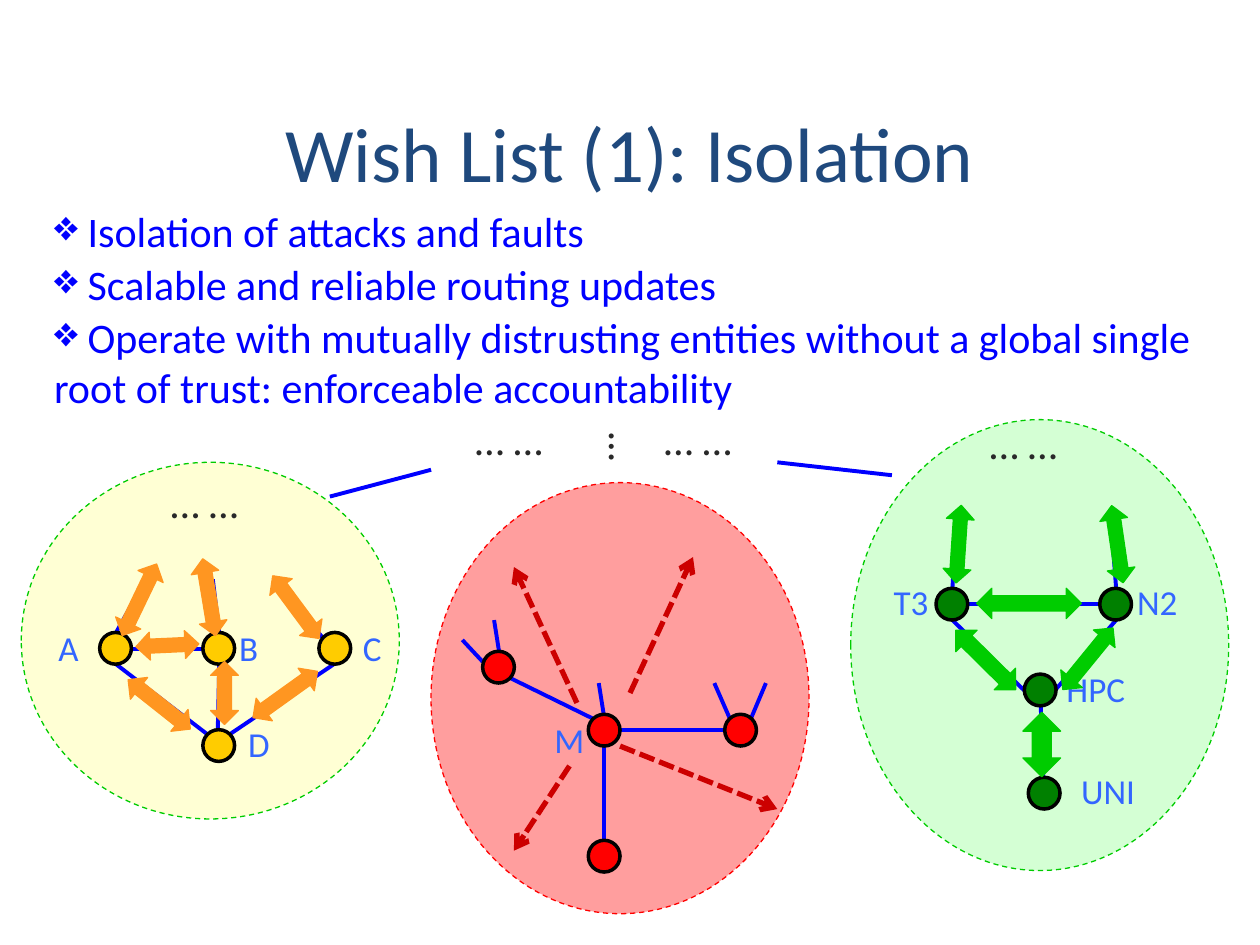
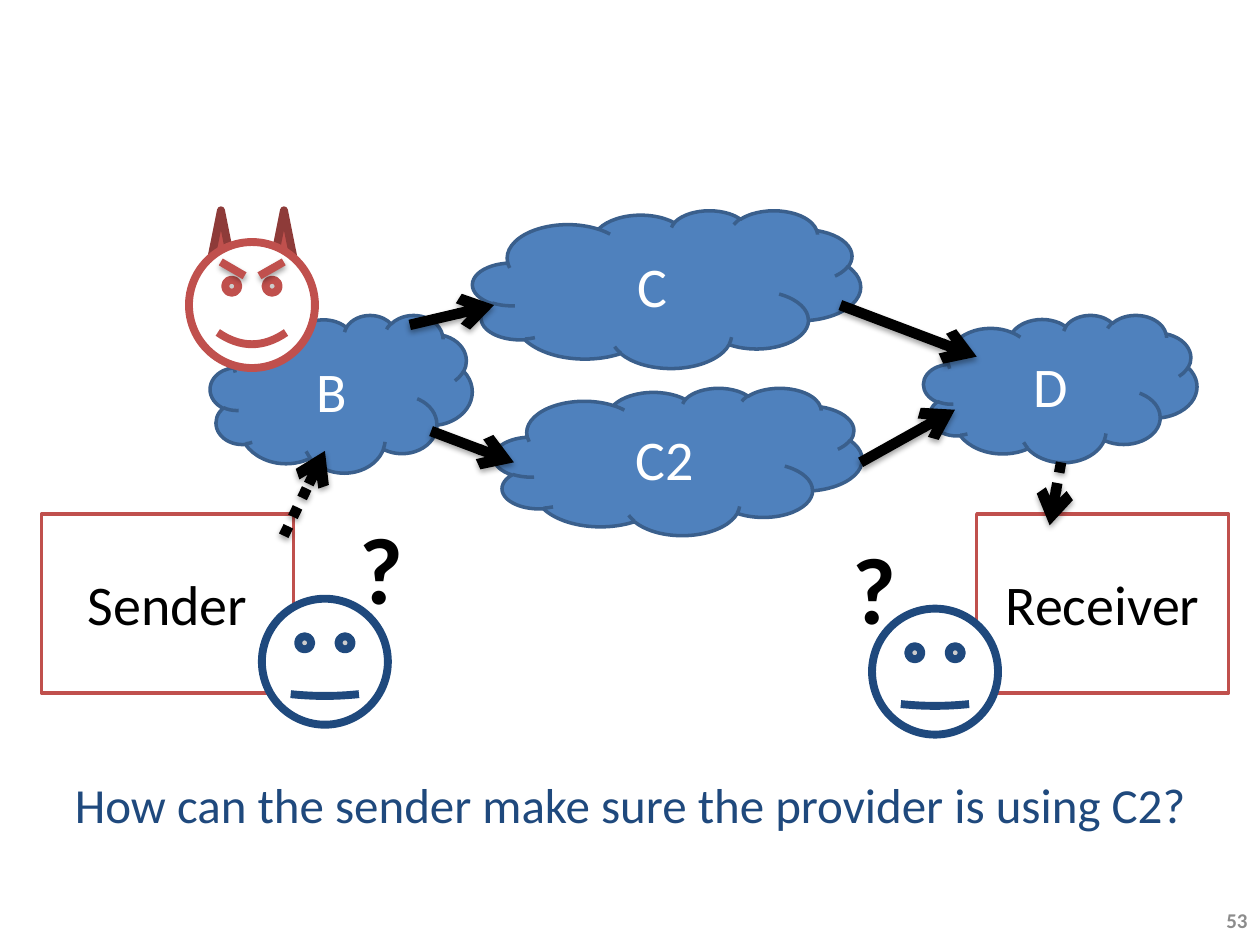
from lxml import etree
from pptx import Presentation
from pptx.dml.color import RGBColor
from pptx.enum.dml import MSO_LINE
from pptx.enum.shapes import MSO_CONNECTOR, MSO_SHAPE
from pptx.enum.text import MSO_ANCHOR, PP_ALIGN
from pptx.oxml.ns import qn
from pptx.util import Cm, Pt

OVAL, RECT, CLOUD = MSO_SHAPE.OVAL, MSO_SHAPE.RECTANGLE, MSO_SHAPE.CLOUD
SMILEY, TRIANGLE = MSO_SHAPE.SMILEY_FACE, MSO_SHAPE.ISOSCELES_TRIANGLE
DOUBLE_ARROW = MSO_SHAPE.LEFT_RIGHT_ARROW
DASH, SHORT_DASH, DOT = MSO_LINE.DASH, MSO_LINE.SQUARE_DOT, MSO_LINE.ROUND_DOT
STRAIGHT = MSO_CONNECTOR.STRAIGHT
LEFT, CENTER, RIGHT = PP_ALIGN.LEFT, PP_ALIGN.CENTER, PP_ALIGN.RIGHT
TOP, MIDDLE = MSO_ANCHOR.TOP, MSO_ANCHOR.MIDDLE

FONT = "Calibri"
COLORS = {
    "title": "1F497D", "blue": "0000FF", "label": "3366FF", "dots": "292929",
    "black": "000000", "white": "FFFFFF", "number": "8C8C8C",
    "lime": "66FF66", "lemon": "FFFF66", "red": "FF0000", "border": "00CC00",
    "green node": "008000", "yellow node": "FFCC00",
    "orange": "FF9621", "attack": "CC0000",
    "cloud": "4F81BD", "cloud edge": "3A5F8C",
    "brick": "C0504D", "horn edge": "8E3B39",
}
COLORS = {name: RGBColor.from_string(value) for name, value in COLORS.items()}


def add_part(slide, kind, box, fill=None, edge=None, width=0.75, text="",
             size=20, color="black", align=CENTER, anchor=MIDDLE, bold=False):
    """Add a preset shape, or a text box when kind is None."""
    box = [Cm(length) for length in box]
    if kind is None:
        part = slide.shapes.add_textbox(*box)
    else:
        part = slide.shapes.add_shape(kind, *box)
        part.shadow.inherit = False
        part.fill.solid()
        part.fill.fore_color.rgb = COLORS[fill]
        part.line.color.rgb = COLORS[edge]
        part.line.width = Pt(width)
    if text:
        part.text_frame.text = text
        part.text_frame.vertical_anchor = anchor
        paragraph = part.text_frame.paragraphs[0]
        paragraph.alignment = align
        paragraph.font.name, paragraph.font.size = FONT, Pt(size)
        paragraph.font.bold = bold
        paragraph.font.color.rgb = COLORS[color]
    return part


def add_line(slide, ends, color, width, dash=None, arrow=False, shadow=False):
    line = slide.shapes.add_connector(STRAIGHT, *[Cm(length) for length in ends])
    line.line.color.rgb = COLORS[color]
    line.line.width = Pt(width)
    if dash:
        line.line.dash_style = dash
    properties = line._element.spPr
    if arrow:
        etree.SubElement(properties.find(qn("a:ln")), qn("a:tailEnd"), type="arrow")
    effects = etree.SubElement(properties, qn("a:effectLst"))
    if shadow:
        outer = etree.SubElement(effects, qn("a:outerShdw"), blurRad="40000",
                                 dist="23000", dir="5400000", rotWithShape="0")
        black = etree.SubElement(outer, qn("a:srgbClr"), val="000000")
        etree.SubElement(black, qn("a:alpha"), val="35000")


prs = Presentation()
prs.slide_width, prs.slide_height = Cm(25.4), Cm(19.05)

# Titles of both slides
TITLES = [
    ("Wish List (1): Isolation", 44, (1.27, 1.47, 22.86, 3.18)),
    ("How can the sender make sure the provider is using C2?", 28,
     (0, 14.61, 25.4, 3.18)),
]
for text, size, box in TITLES:
    title = prs.slides.add_slide(prs.slide_layouts[5]).shapes.title
    title.left, title.top, title.width, title.height = [Cm(n) for n in box]
    title.text_frame.text = text
    title.text_frame.vertical_anchor = MIDDLE
    heading = title.text_frame.paragraphs[0]
    heading.alignment = CENTER
    heading.font.name, heading.font.size = FONT, Pt(size)
    heading.font.color.rgb = COLORS["title"]
isolation, routing = prs.slides

# Slide 1: isolated zones, translucent with dashed borders
ZONES = [
    ("lime", "border", 28, (17.15, 8.46, 7.62, 9.09)),
    ("lemon", "border", 28, (0.43, 9.32, 7.62, 7.19)),
    ("red", "red", 38, (8.69, 9.73, 7.62, 8.69)),
]
for fill, edge, opacity, box in ZONES:
    zone = add_part(isolation, OVAL, box, fill, edge)
    zone.line.dash_style = DASH
    tint = zone._element.spPr.find(qn("a:solidFill"))[0]
    etree.SubElement(tint, qn("a:alpha"), val=str(opacity * 1000))

# Links between zones, then inside the green, red and yellow zones
LINKS = [
    (8.69, 9.47, 6.65, 10.01), (17.98, 9.58, 15.67, 9.32),
    (21.03, 15.67, 20.98, 14.22), (20.65, 13.92, 19.2, 12.5),
    (21.29, 13.89, 22.5, 12.5), (19.25, 10.95, 19.2, 11.86),
    (22.43, 10.95, 22.5, 11.86), (22.17, 12.17, 19.51, 12.17),
    (10.29, 13.67, 11.94, 14.48), (12.5, 14.71, 14.61, 14.71),
    (12.17, 15.04, 12.17, 16.94), (9.96, 12.5, 10.06, 13.13),
    (9.32, 12.9, 9.73, 13.34), (12.07, 13.77, 12.17, 14.4),
    (14.4, 13.77, 14.71, 14.48), (15.44, 13.77, 15.14, 14.48),
    (3.05, 11.48, 2.34, 12.75), (4.29, 11.68, 4.42, 12.75),
    (2.34, 13.39, 4.19, 14.81), (4.62, 14.81, 6.73, 13.39),
    (4.39, 14.71, 4.42, 13.39), (4.09, 13.08, 2.64, 13.08),
    (5.51, 11.63, 6.5, 12.85),
]
for ends in LINKS:
    add_line(isolation, ends, "blue", 2.25)

# Nodes
NODES = {
    "green node": [(20.73, 15.67), (20.65, 13.59), (18.87, 11.86), (22.17, 11.86)],
    "red": [(11.86, 14.4), (11.86, 16.94), (9.73, 13.13), (14.61, 14.4)],
    "yellow node": [(4.09, 14.71), (4.09, 12.75), (2.01, 12.75), (6.43, 12.75)],
}
for fill, corners in NODES.items():
    for left, top in corners:
        add_part(isolation, OVAL, (left, top, 0.64, 0.64), fill, "black", 2)

# Node labels, without side margins so that each name keeps to one line
LABELS = [
    ("UNI", 21.36, 15.39, 1.96), ("HPC", 21.29, 13.34, 1.6),
    ("N2", 22.81, 11.58, 1.04), ("T3", 17.78, 11.58, 1.17),
    ("M", 10.92, 14.35, 1.12), ("D", 4.75, 14.45, 0.94),
    ("C", 7.06, 12.5, 0.89), ("A", 0.91, 12.5, 0.94), ("B", 4.57, 12.5, 0.89),
]
for text, left, top, width in LABELS:
    label = add_part(isolation, None, (left, top, width, 1.12), text=text,
                     color="label", anchor=TOP)
    label.text_frame.word_wrap = False
    label.text_frame.margin_left = label.text_frame.margin_right = 0

# Ellipses standing for further domains
ELLIPSES = [
    ("… …", 9.32, 8.33, 1.88, 0), ("… …", 13.13, 8.33, 1.88, 0),
    ("… …", 19.69, 8.41, 1.88, 0), ("… …", 3.18, 9.6, 1.88, 0),
    (" …", 11.89, 8.33, 1.3, 90),
]
for text, left, top, width, angle in ELLIPSES:
    ellipsis = add_part(isolation, None, (left, top, width, 1.19), text=text,
                        size=24, color="dots", anchor=TOP)
    ellipsis.rotation = angle
    ellipsis.text_frame.word_wrap = False
    ellipsis.text_frame.paragraphs[0].line_spacing = 0.9

# Traffic arrows: left, top, width, height, angle
TRAFFIC = {
    "border": [
        (19.02, 13, 1.7, 0.61, 44.7), (21.13, 13, 1.6, 0.56, 129.2),
        (18.54, 10.69, 1.57, 0.56, 93.8), (21.74, 10.69, 1.57, 0.56, 81.6),
        (20.35, 14.63, 1.3, 0.76, 90), (19.69, 11.86, 2.11, 0.61, 0),
    ],
    "orange": [
        (3.43, 11.76, 1.57, 0.56, 80.6), (2.01, 11.81, 1.6, 0.56, 115.7),
        (2.74, 12.73, 1.27, 0.56, 357.4), (3.89, 13.69, 1.27, 0.56, 90),
        (2.41, 13.92, 1.6, 0.56, 38.4), (4.95, 13.72, 1.6, 0.56, 144.4),
        (5.18, 11.96, 1.57, 0.56, 53.5),
    ],
}
for color, arrows in TRAFFIC.items():
    for *box, angle in arrows:
        add_part(isolation, DOUBLE_ARROW, box, color, color).rotation = angle

# Attacks from M
ATTACKS = [
    (11.63, 14.17, 10.36, 11.43), (12.5, 15.04, 15.67, 16.31),
    (12.7, 13.97, 13.97, 11.23), (11.48, 15.44, 10.36, 17.15),
]
for ends in ATTACKS:
    add_line(isolation, ends, "attack", 3, SHORT_DASH, arrow=True)

# Wishes
WISHES = [
    (" Isolation of attacks and faults", 13.97, 1.3),
    (" Scalable and reliable routing updates", 18.42, 1.3),
    (" Operate with mutually distrusting entities without a global single "
     "root of trust: enforceable accountability", 23.93, 2.31),
]
for row, (text, width, height) in enumerate(WISHES):
    wish = add_part(isolation, None, (0.84, 4.01 + 1.07 * row, width, height),
                    text=text, size=24, color="blue", align=LEFT, anchor=TOP)
    wish.text_frame.word_wrap = True
    paragraph = wish.text_frame.paragraphs[0]
    paragraph.runs[0].font.size = Pt(24)  # the bullet takes its size from the run
    bullet = etree.Element(qn("a:buChar"), char="❖")
    paragraph._p.pPr.find(qn("a:defRPr")).addprevious(bullet)

# Slide 2: end hosts
for text, left in [("Sender", 0.84), ("Receiver", 19.69)]:
    add_part(routing, RECT, (left, 10.36, 5.08, 3.61), "white", "brick", 2, text, 32)

# Provider clouds
PROVIDERS = [
    ("B", (4.24, 6.35, 5.28, 3.18)), ("C", (9.53, 4.24, 7.82, 3.18)),
    ("D", (18.62, 6.35, 5.51, 2.97)), ("C2", (9.96, 7.82, 7.42, 2.97)),
]
for text, box in PROVIDERS:
    add_part(routing, CLOUD, box, "cloud", "cloud edge", 2, text, 32, "white")

# Routes: solid between providers, dotted to the hosts
ROUTES = [
    (None, (8.26, 6.55, 9.96, 6.15)), (None, (16.94, 6.15, 19.69, 7.19)),
    (None, (17.35, 9.32, 19.25, 8.26)), (None, (8.69, 8.69, 10.36, 9.32)),
    (DOT, (5.72, 10.8, 6.55, 9.09)), (DOT, (21.39, 9.32, 21.16, 10.59)),
]
for dash, ends in ROUTES:
    add_line(routing, ends, "black", 6, dash, arrow=True, shadow=True)

# Horns, faces and brows
for left in (5.51, 4.24):
    add_part(routing, TRIANGLE, (left, 4.24, 0.43, 1.07), "brick", "horn edge", 4.5)
FACES = [
    (17.58, 12.27, "title", 0.007), (5.28, 12.07, "title", 0.007),
    (3.81, 4.88, "brick", 0.047),
]
for left, top, edge, smile in FACES:
    face = add_part(routing, SMILEY, (left, top, 2.54, 2.54), "white", edge, 4.5)
    face.adjustments[0] = smile
for ends in [(4.45, 5.28, 4.93, 5.56), (5.72, 5.28, 5.23, 5.56)]:
    add_line(routing, ends, "brick", 4.5, shadow=True)

# Question marks
for left, top in [(6.99, 10.16), (16.94, 10.57)]:
    doubt = add_part(routing, None, (left, top, 1.4, 2.57), text="?", size=54,
                     align=LEFT, anchor=TOP, bold=True)
    doubt.text_frame.word_wrap = False

# Slide number
add_part(routing, None, (23.65, 18.03, 1.75, 1.02), text="53", size=12,
         color="number", align=RIGHT, bold=True)

prs.save("out.pptx")
